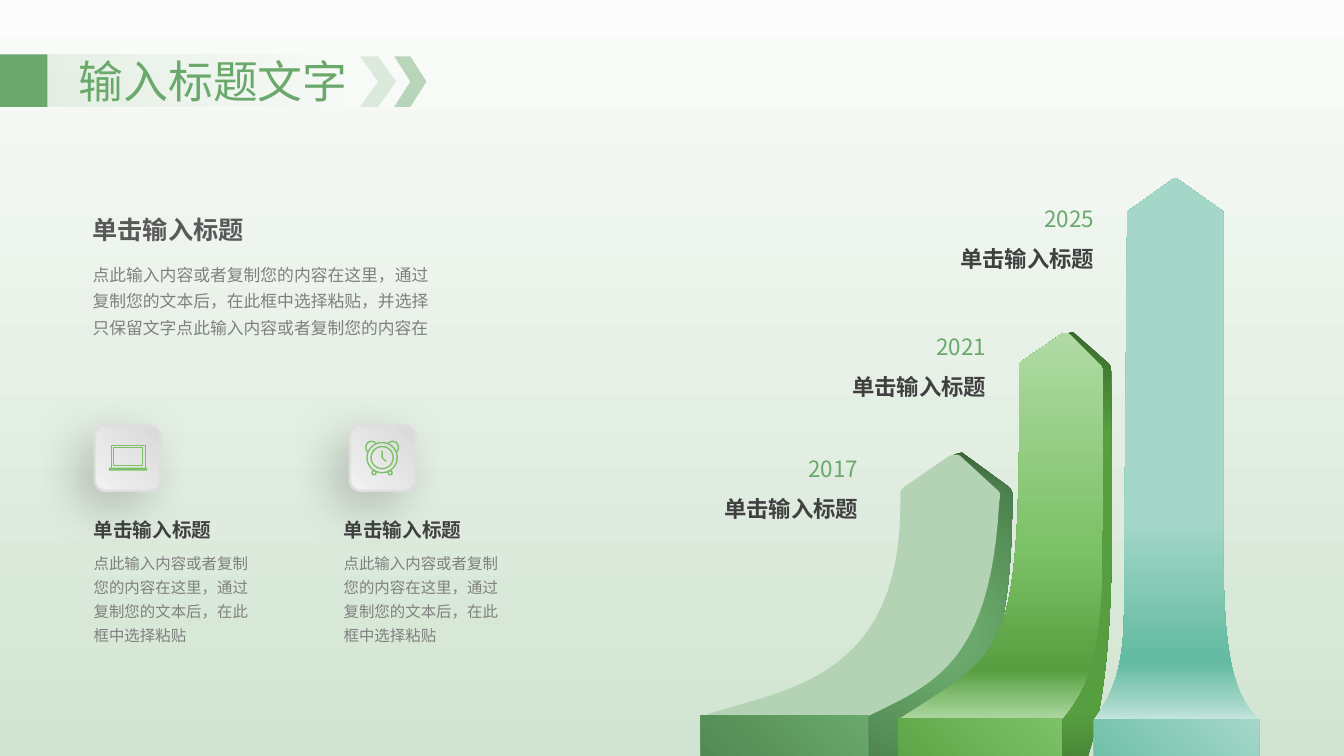
from lxml import etree
from pptx import Presentation
from pptx.dml.color import RGBColor
from pptx.enum.shapes import MSO_SHAPE
from pptx.enum.text import MSO_ANCHOR, MSO_AUTO_SIZE, PP_ALIGN
from pptx.oxml.ns import qn
from pptx.util import Inches, Pt

RECT, ROUND, OVAL, CHEVRON = (MSO_SHAPE.RECTANGLE, MSO_SHAPE.ROUNDED_RECTANGLE,
                              MSO_SHAPE.OVAL, MSO_SHAPE.CHEVRON)
LEFT, RIGHT, JUSTIFY = PP_ALIGN.LEFT, PP_ALIGN.RIGHT, PP_ALIGN.JUSTIFY


class Theme:
    font = "Noto Sans CJK SC"
    green, icon, rim, black = "6AA86B", "7CC167", "DEDEDE", "000000"
    heading, strong, body = "595959", "404040", "808080"
    title_size, heading_size, year_size, card_size = 32, 18, 16, 14
    body_size, small_size = 12, 11
    # Gradients are lists of (position, colour[, opacity])
    background = [(0, "FBFCFB"), (100, "D1E4D1")]
    strip = [(0, green, 14), (100, green, 0)]
    card = [(0, "F2F2F2"), (100, "D9D9D9")]


# Content
TITLE = "输入标题文字"
HEADING = "单击输入标题"
INTRO = ("点此输入内容或者复制您的内容在这里，通过复制您的文本后，在此框中选择粘贴，"
         "并选择只保留文字点此输入内容或者复制您的内容在")
CARD_TEXT = "点此输入内容或者复制您的内容在这里，通过复制您的文本后，在此框中选择粘贴"
CARDS = [(0.94, 0.83), (3.47, 3.31)]  # tile left, text left
MILESTONES = [("2017", 6.95, 4.41, 1.66), ("2021", 8.22, 3.2, 1.66),
              ("2025", 9.1, 1.93, 1.85)]  # year, left, top, width
CHEVRONS = [(3.57, 0.36, 20), (3.91, 0.32, 44)]  # left, width, opacity

# Arrows: an outline holds points (x, y) and curves (x1, y1, x2, y2, x, y)
ARROWS = [
    dict(side=[(9.54, 4.49), (9.99, 4.82), (10.02, 4.85, 10.04, 4.87, 10.04, 4.9),
               (10.04, 6.45, 9.78, 7.22, 8.61, 8.06), (8.59, 7.1),
               (8.96, 6.87, 9.82, 6.63, 9.91, 4.97),
               (9.91, 4.94, 9.92, 4.9, 9.9, 4.88), (9.75, 4.76, 9.53, 4.5, 9.46, 4.51)],
         side_fill=[(18, "6AA86B"), (80, "4C824D"), (100, "335633")],
         front=[(9.49, 4.51), (9.52, 4.52), (9.89, 4.86),
                (9.93, 4.89, 9.92, 4.92, 9.91, 4.99),
                (9.82, 6.59, 9.25, 6.79, 8.6, 7.11), (6.95, 7.11),
                (7.75, 6.83, 8.97, 6.79, 8.93, 4.9),
                (8.93, 4.87, 8.95, 4.85, 8.97, 4.83), (9.42, 4.52)],
         front_fill=[(0, "B4D3B5")],
         base=(6.95, 7.1, 1.66, 0.94), base_fill=[(0, "4C824D"), (100, "6AA86B")]),
    dict(side=[(10.64, 3.29), (11, 3.61), (11.02, 3.63, 11.01, 3.66, 11.02, 3.68),
               (11.01, 5.17, 11.16, 7.19, 10.52, 8.06), (10.48, 7.17),
               (11, 6.45, 10.91, 5.24, 10.91, 3.78),
               (10.91, 3.74, 10.94, 3.69, 10.93, 3.67),
               (10.81, 3.55, 10.63, 3.3, 10.57, 3.31)],
         side_fill=[(58, "569E40"), (100, "39692B")],
         front=[(10.58, 3.3), (10.61, 3.32), (10.9, 3.61),
                (10.91, 3.62, 10.92, 3.62, 10.94, 3.66),
                (10.93, 5.99, 11.01, 6.56, 10.52, 7.15), (8.91, 7.14),
                (10.01, 6.43, 10.12, 6.57, 10.11, 3.62),
                (10.12, 3.59, 10.15, 3.58, 10.17, 3.56), (10.55, 3.3)],
         front_fill=[(0, "B0DAA4"), (13, "569E40"), (44, "7CC167"), (100, "B0DAA4")],
         base=(8.91, 7.13, 1.62, 0.92), base_fill=[(0, "569E40"), (100, "7CC167")]),
    dict(front=[(11.64, 1.77), (11.67, 1.77), (12.12, 2.09), (12.13, 2.1), (12.13, 5.54),
                (12.15, 6.18, 12.15, 6.86, 12.5, 7.15), (10.85, 7.14),
                (11.18, 6.7, 11.15, 6.3, 11.15, 5.54), (11.18, 2.1), (11.63, 1.78)],
         front_fill=[(0, "C8E7DE"), (3, "A4D7C8"), (11, "62BAA0"), (37, "A4D7C8")],
         base=(10.85, 7.14, 1.64, 0.94), base_fill=[(0, "62BAA0"), (100, "A4D7C8")]),
]

prs = Presentation()
prs.slide_width, prs.slide_height = Inches(13.33), Inches(7.5)
s = prs.slides.add_slide(prs.slide_layouts[5])


def paint(fill, holder, stops, angle=None):
    """Solid fill for one stop; radial gradient when angle is None, else linear."""
    fill.solid()
    fill.fore_color.rgb = RGBColor.from_string(stops[0][1])
    old = holder.find(qn("a:solidFill"))
    new = etree.Element(qn("a:solidFill" if len(stops) == 1 else "a:gradFill"))
    parent = new if len(stops) == 1 else etree.SubElement(new, qn("a:gsLst"))
    for pos, color, *opacity in stops:
        gs = parent
        if len(stops) > 1:
            gs = etree.SubElement(parent, qn("a:gs"), pos=str(pos * 1000))
        clr = etree.SubElement(gs, qn("a:srgbClr"), val=color)
        if opacity:
            etree.SubElement(clr, qn("a:alpha"), val=str(opacity[0] * 1000))
    if len(stops) > 1 and angle is None:
        circle = etree.SubElement(new, qn("a:path"), path="circle")
        etree.SubElement(circle, qn("a:fillToRect"), dict.fromkeys("ltrb", "50000"))
    elif len(stops) > 1:
        etree.SubElement(new, qn("a:lin"), ang=str(angle * 60000), scaled="0")
    holder.replace(old, new)


def finish(sp, stops, angle=None, line=None, width=1):
    sp.shadow.inherit = False
    if stops:
        paint(sp.fill, sp.element.spPr, stops, angle)
    else:
        sp.fill.background()
    if line:
        sp.line.color.rgb = RGBColor.from_string(line)
        sp.line.width = Pt(width)
    else:
        sp.line.fill.background()
    return sp


def shape(kind, box, stops, angle=None, **line):
    return finish(s.shapes.add_shape(kind, *map(Inches, box)), stops, angle, **line)


def outline(steps, stops, angle=None, close=True, **line):
    points = [steps[0]]
    for step in steps[1:]:
        if len(step) == 2:
            points.append(step)
            continue
        p0, p1, p2, p3 = points[-1], step[:2], step[2:4], step[4:]
        for t in (i / 24 for i in range(1, 25)):
            u = 1 - t
            points.append(tuple(u**3 * a + 3 * u * u * t * b + 3 * u * t * t * c + t**3 * d
                                for a, b, c, d in zip(p0, p1, p2, p3)))
    points = [(Inches(x), Inches(y)) for x, y in points]
    fb = s.shapes.build_freeform(*points[0])
    fb.add_line_segments(points[1:], close=close)
    return finish(fb.convert_to_shape(), stops, angle, **line)


def write(sp, text, size, color, bold=False, align=LEFT, spacing=1.0):
    tf = sp.text_frame
    tf.word_wrap = True
    tf.auto_size = MSO_AUTO_SIZE.SHAPE_TO_FIT_TEXT
    p = tf.paragraphs[0]
    p.text, p.alignment, p.line_spacing = text, align, spacing
    p.font.name, p.font.size, p.font.bold = Theme.font, Pt(size), bold
    p.font.color.rgb = RGBColor.from_string(color)
    latin = next(sp.element.iter(qn("a:latin")))
    latin.addnext(etree.Element(qn("a:ea"), typeface=Theme.font))


def label(box, *args, **style):
    write(s.shapes.add_textbox(*map(Inches, box)), *args, **style)


# Background
paint(s.background.fill, s.element.find(".//" + qn("p:bgPr")), Theme.background, 90)

# Growing arrows
for arrow in ARROWS:
    if "side" in arrow:
        outline(arrow["side"], arrow["side_fill"])
    outline(arrow["front"], arrow["front_fill"], 270)
    shape(RECT, arrow["base"], arrow["base_fill"], 315)

# Cards
for tile_left, text_left in CARDS:
    tile = shape(ROUND, (tile_left, 4.22, 0.65, 0.65), Theme.card, 315,
                 line=Theme.rim, width=1.75)
    effects = tile.element.spPr.find(qn("a:effectLst"))
    shadow = etree.SubElement(effects, qn("a:outerShdw"), blurRad=str(Pt(35)),
                              dist=str(Pt(15)), dir=str(135 * 60000), rotWithShape="0")
    clr = etree.SubElement(shadow, qn("a:srgbClr"), val=Theme.black)
    etree.SubElement(clr, qn("a:alpha"), val="20000")
    label((text_left, 5.39, 1.82, 1.06), CARD_TEXT, Theme.small_size, Theme.body, spacing=1.3)
    label((text_left, 5.04, 1.62, 0.36), HEADING, Theme.card_size, Theme.strong,
          bold=True, spacing=1.2)

# Introduction
label((0.82, 2.52, 3.53, 0.89), INTRO, Theme.body_size, Theme.body, align=JUSTIFY, spacing=1.3)
label((0.82, 2.02, 2.67, 0.43), HEADING, Theme.heading_size, Theme.heading,
      bold=True, align=JUSTIFY, spacing=1.2)

# Laptop icon
for box in [(1.11, 4.42, 0.33, 0.23), (1.13, 4.44, 0.28, 0.18)]:
    shape(RECT, box, None, line=Theme.icon, width=0.75)
shape(ROUND, (1.08, 4.64, 0.38, 0.03), [(0, Theme.icon)])

# Alarm clock icon
CX, CY = 3.79, 4.54
for radius in (0.15, 0.11):
    shape(OVAL, (CX - radius, CY - radius, 2 * radius, 2 * radius), None, line=Theme.icon)
for side in (-1, 1):
    bell = [(0.14, 4.49), (0.2, 4.42, 0.12, 4.34, 0.06, 4.4)]
    outline([tuple(CX + side * v if i % 2 == 0 else v for i, v in enumerate(step))
             for step in bell], None, close=False, line=Theme.icon)
    shape(OVAL, (CX + side * 0.08 - 0.02, 4.67, 0.04, 0.04), None, line=Theme.icon)
outline([(CX, 4.47), (CX, CY), (3.83, 4.58)], None, close=False, line=Theme.icon)

# Milestone labels
for year, left, top, width in MILESTONES:
    label((left, top + 0.4, width, 0.4), HEADING, Theme.year_size, Theme.strong,
          bold=True, align=RIGHT, spacing=1.2)
    label((left, top, width, 0.4), year, Theme.year_size, Theme.green, align=RIGHT, spacing=1.2)

# Title bar
strip = shape(RECT, (0.47, 0.54, 3.05, 0.52), Theme.strip, 0)
title = s.shapes.title
title.left, title.top, title.width, title.height = map(Inches, (0.68, 0.48, 3.45, 0.64))
write(title, TITLE, Theme.title_size, Theme.green)
title.text_frame.vertical_anchor = MSO_ANCHOR.MIDDLE
strip.element.addnext(title.element)
shape(RECT, (0, 0.54, 0.47, 0.52), [(0, Theme.green)])
for left, width, opacity in CHEVRONS:
    shape(CHEVRON, (left, 0.56, width, 0.5), [(0, Theme.green, opacity)])

prs.save("out.pptx")
